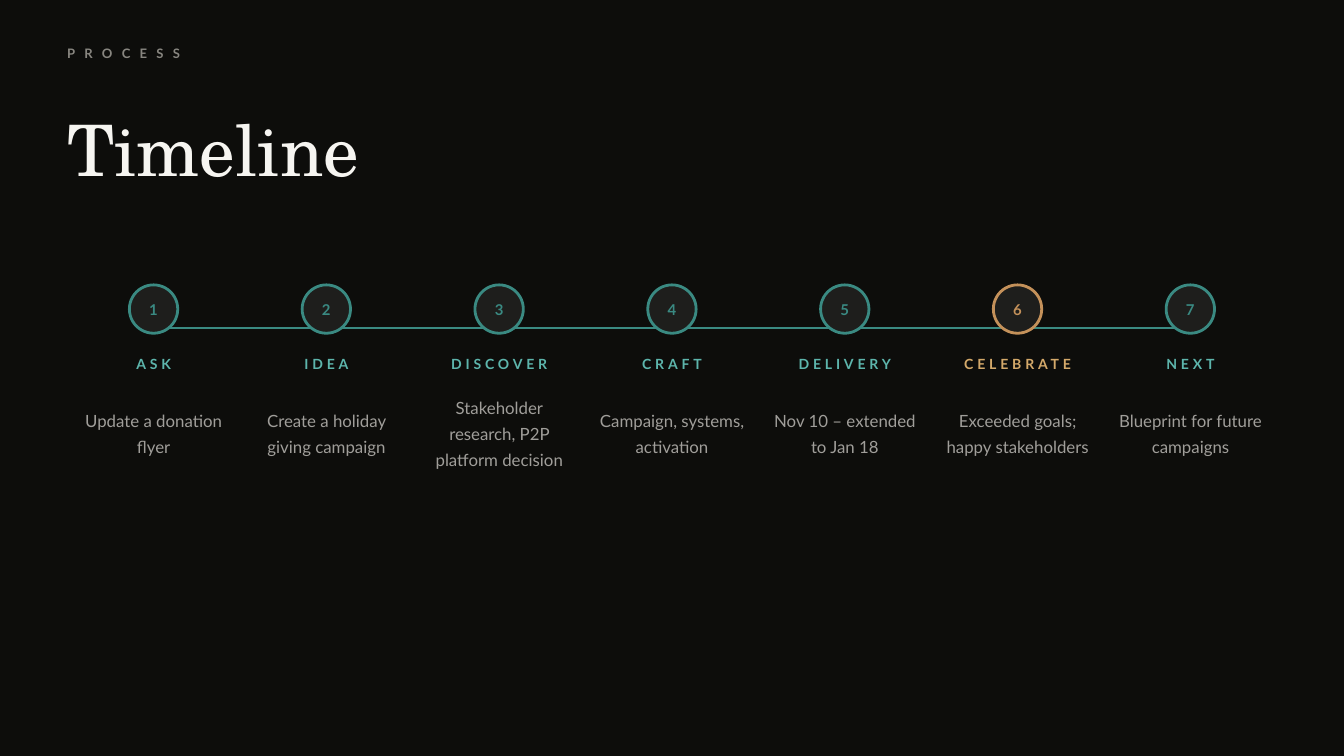
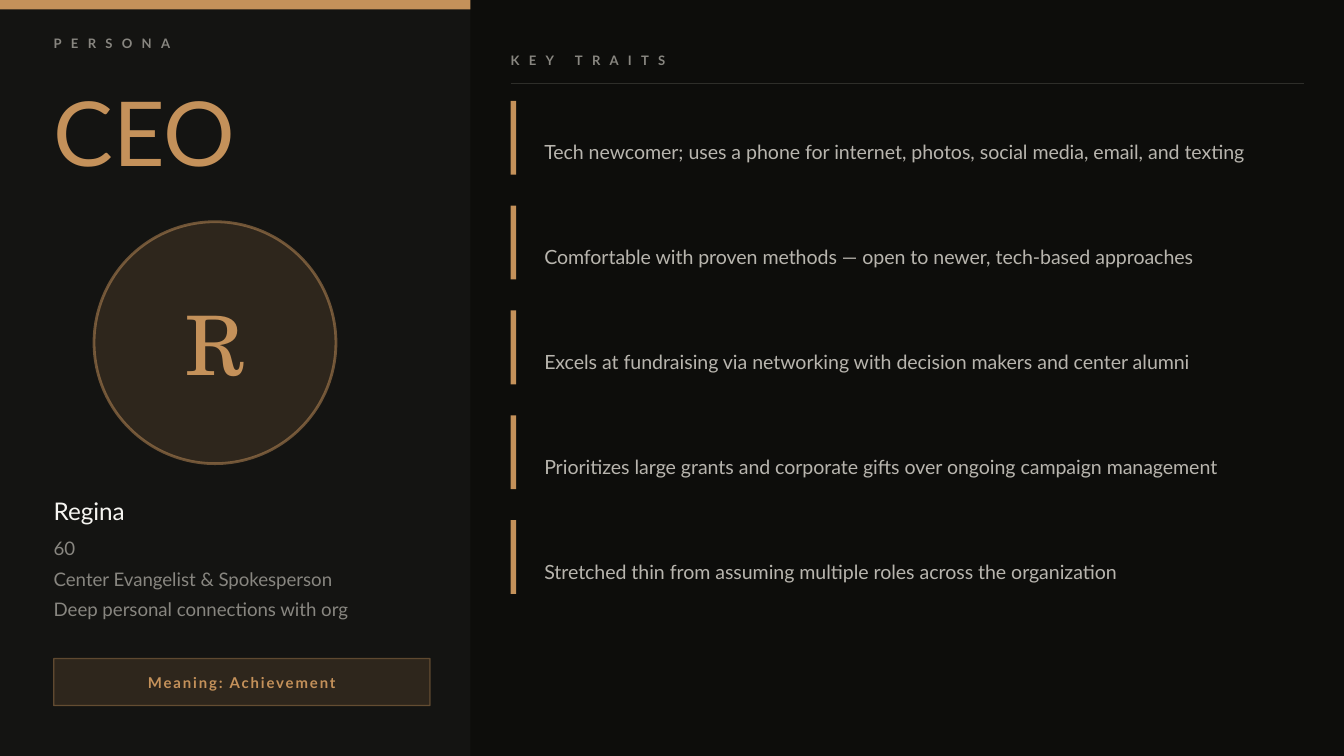
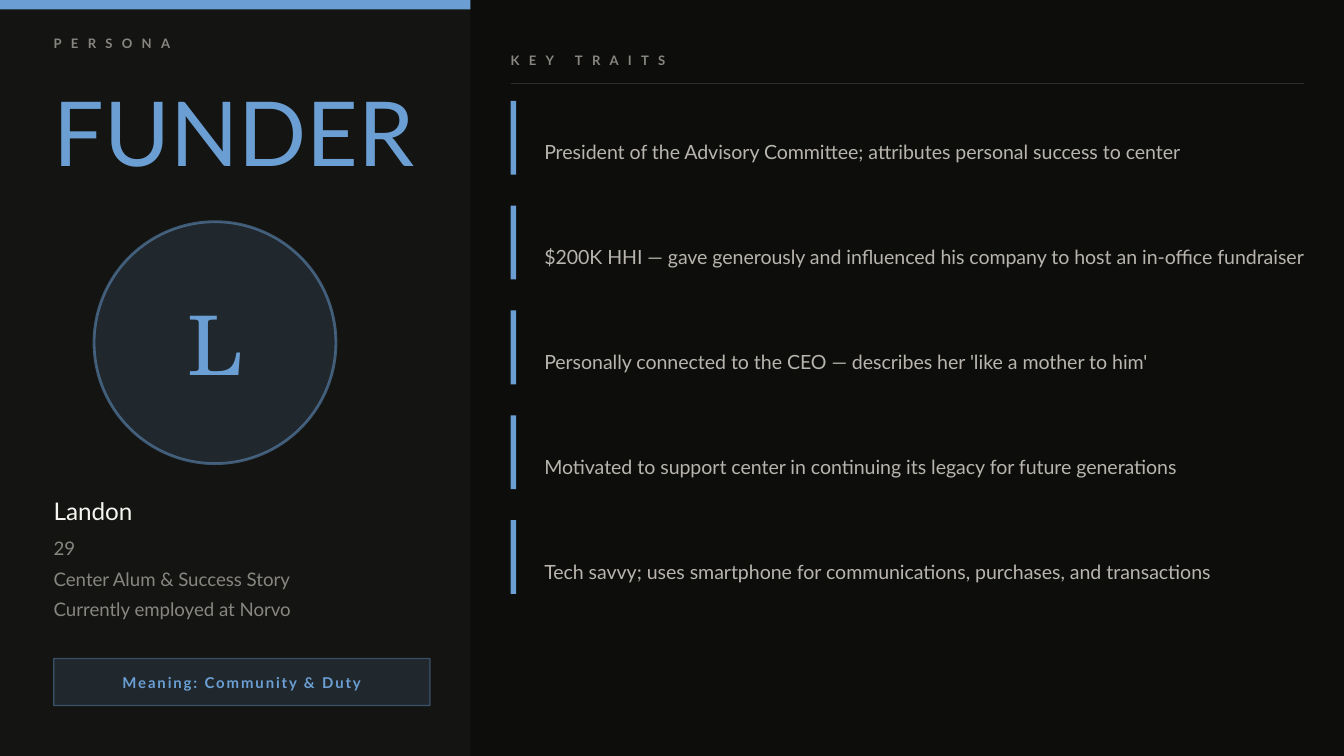
from lxml import etree
from pptx import Presentation
from pptx.dml.color import RGBColor
from pptx.enum.shapes import MSO_CONNECTOR, MSO_SHAPE
from pptx.enum.text import MSO_ANCHOR, MSO_AUTO_SIZE, PP_ALIGN
from pptx.oxml.ns import qn
from pptx.util import Inches, Pt

RECTANGLE = MSO_SHAPE.RECTANGLE
OVAL = MSO_SHAPE.OVAL
STRAIGHT = MSO_CONNECTOR.STRAIGHT
MIDDLE = MSO_ANCHOR.MIDDLE
FIXED_SIZE = MSO_AUTO_SIZE.NONE
LEFT = PP_ALIGN.LEFT
CENTER = PP_ALIGN.CENTER

COLUMNS, ROWS = 100, 56.25
CELL = 0.1
TITLE_ONLY = 5

SANS, SERIF = "Lato", "TeX Gyre Schola"
BACKGROUND, PANEL, NODE, RULE = "0D0D0B", "141412", "1E1E1C", "2E2E2A"
WHITE, GRAY, STEP_GRAY, TRAIT_GRAY = "F6F5F1", "888680", "A09E9A", "B8B5AE"
TEAL, LIGHT_TEAL = "3A8A82", "5DB5AC"
GOLD, LIGHT_GOLD, BLUE = "C4915A", "D4A96A", "6B9FD4"

MARGIN = 5
HIGHLIGHTED_STEP = "CELEBRATE"
STEPS = [
    ("ASK", "Update a donation flyer"),
    ("IDEA", "Create a holiday giving campaign"),
    ("DISCOVER", "Stakeholder research, P2P platform decision"),
    ("CRAFT", "Campaign, systems, activation"),
    ("DELIVERY", "Nov 10 – extended to Jan 18"),
    (HIGHLIGHTED_STEP, "Exceeded goals; happy stakeholders"),
    ("NEXT", "Blueprint for future campaigns"),
]

PANEL_WIDTH, PANEL_MARGIN = 35, 4
TRAITS_LEFT, TRAITS_TOP, TRAIT_PITCH = 38, 7.5, 7.8
PERSONAS = [
    {
        "role": "CEO",
        "name": "Regina",
        "accent": GOLD,
        "details": ["60", "Center Evangelist & Spokesperson", "Deep personal connections with org"],
        "meaning": "Achievement",
        "traits": [
            "Tech newcomer; uses a phone for internet, photos, social media, email, and texting",
            "Comfortable with proven methods — open to newer, tech-based approaches",
            "Excels at fundraising via networking with decision makers and center alumni",
            "Prioritizes large grants and corporate gifts over ongoing campaign management",
            "Stretched thin from assuming multiple roles across the organization",
        ],
    },
    {
        "role": "FUNDER",
        "name": "Landon",
        "accent": BLUE,
        "details": ["29", "Center Alum & Success Story", "Currently employed at Norvo"],
        "meaning": "Community & Duty",
        "traits": [
            "President of the Advisory Committee; attributes personal success to center",
            "$200K HHI — gave generously and influenced his company to host an in-office fundraiser",
            "Personally connected to the CEO — describes her 'like a mother to him'",
            "Motivated to support center in continuing its legacy for future generations",
            "Tech savvy; uses smartphone for communications, purchases, and transactions",
        ],
    },
]


def color(value):
    """Turn a hex string into a colour."""
    return RGBColor.from_string(value)


def cells(*counts):
    """Turn counts of grid cells into lengths."""
    return [Inches(count * CELL) for count in counts]


def write(shape, text, size, hex_color, font=SANS, bold=False, align=LEFT, tracking=0, spacing=None):
    """Fill a shape with one formatted, vertically centred paragraph."""
    frame = shape.text_frame
    frame.text = text
    frame.word_wrap = True
    frame.auto_size = FIXED_SIZE
    frame.vertical_anchor = MIDDLE
    frame.margin_left = frame.margin_right = frame.margin_top = frame.margin_bottom = 0
    paragraph = frame.paragraphs[0]
    paragraph.alignment = align
    if spacing:
        paragraph.line_spacing = spacing
    paragraph.font.name = font
    paragraph.font.size = Pt(size)
    paragraph.font.bold = bold
    paragraph.font.color.rgb = color(hex_color)
    if tracking:
        for properties in shape.element.iter(qn("a:defRPr")):
            properties.set("spc", str(tracking * 100))


def add_text(slide, box, text, size, hex_color, **style):
    """Add a text box on the grid."""
    write(slide.shapes.add_textbox(*cells(*box)), text, size, hex_color, **style)


def add_title(slide, box, text, size, hex_color, font):
    """Move the title placeholder to the front and format it."""
    title = slide.shapes.title
    title.element.getparent().append(title.element)
    title.left, title.top, title.width, title.height = cells(*box)
    write(title, text, size, hex_color, font=font)


def add_eyebrow(slide, box, text):
    """Add a small widely tracked heading."""
    add_text(slide, box, text, 7, GRAY, bold=True, tracking=5)


def set_opacity(shape, route, percent):
    """Make the colour found at a route below the shape properties translucent."""
    target = shape.element.spPr.find("/".join(qn(tag) for tag in route))
    etree.SubElement(target, qn("a:alpha")).set("val", str(percent * 1000))


def add_figure(slide, kind, box, fill, line=None, line_width=1.5):
    """Add a filled preset shape with an optional outline."""
    shape = slide.shapes.add_shape(kind, *cells(*box))
    shape.shadow.inherit = False
    shape.fill.solid()
    shape.fill.fore_color.rgb = color(fill)
    if line:
        shape.line.color.rgb = color(line)
        shape.line.width = Pt(line_width)
    else:
        shape.line.fill.background()
    return shape


def add_tinted_figure(slide, kind, box, accent, line_width, line_opacity):
    """Add a shape with a faint accent fill and a translucent outline."""
    shape = add_figure(slide, kind, box, accent, accent, line_width)
    set_opacity(shape, ["a:solidFill", "a:srgbClr"], 15)
    set_opacity(shape, ["a:ln", "a:solidFill", "a:srgbClr"], line_opacity)


def add_rule(slide, left, right, top, hex_color, width):
    """Add a horizontal line."""
    connector = slide.shapes.add_connector(STRAIGHT, *cells(left, top, right, top))
    connector.line.color.rgb = color(hex_color)
    connector.line.width = Pt(width)
    etree.SubElement(connector.element.spPr, qn("a:effectLst"))


def add_step(slide, number, center, column_width, label, description):
    """Add one numbered timeline step around its centre."""
    highlighted = label == HIGHLIGHTED_STEP
    accent, label_color = (GOLD, LIGHT_GOLD) if highlighted else (TEAL, LIGHT_TEAL)
    diameter, text_width = 3.6, column_width * 0.9
    node_left, text_left = center - diameter / 2, center - text_width / 2
    add_figure(slide, OVAL, (node_left, 21.2, diameter, diameter), NODE, accent)
    add_text(slide, (node_left, 21.5, diameter, 3), str(number), 8, accent, bold=True, align=CENTER)
    add_text(slide, (text_left, 25.8, text_width, 2.5), label, 7.5, label_color,
             bold=True, align=CENTER, tracking=2)
    add_text(slide, (text_left, 28.8, text_width, 6.5), description, 9, STEP_GRAY,
             align=CENTER, spacing=1.3)


def add_timeline_slide(presentation, layout):
    """Add the slide with the process steps."""
    slide = presentation.slides.add_slide(layout)
    add_eyebrow(slide, (MARGIN, 3, 90, 2), "PROCESS")
    add_title(slide, (MARGIN, 5, 50, 12), "Timeline", 38, WHITE, SERIF)
    column_width = (COLUMNS - 2 * MARGIN) / len(STEPS)
    centers = [MARGIN + (index + 0.5) * column_width for index in range(len(STEPS))]
    add_rule(slide, centers[0], centers[-1], 24.4, TEAL, 1)
    for number, (center, step) in enumerate(zip(centers, STEPS), start=1):
        add_step(slide, number, center, column_width, *step)


def add_profile(slide, persona):
    """Add the left panel that introduces a persona."""
    accent = persona["accent"]
    add_figure(slide, RECTANGLE, (0, 0, PANEL_WIDTH, ROWS), PANEL)
    add_figure(slide, RECTANGLE, (0, 0, PANEL_WIDTH, 0.7), accent)
    add_eyebrow(slide, (PANEL_MARGIN, 2.2, 25, 2), "PERSONA")
    add_title(slide, (PANEL_MARGIN, 4.5, 30, 10.5), persona["role"], 48, accent, SANS)
    add_tinted_figure(slide, OVAL, (7, 16.5, 18, 18), accent, 1.5, 50)
    add_text(slide, (7, 18, 18, 15), persona["name"][0], 44, accent, font=SERIF, align=CENTER)
    add_text(slide, (PANEL_MARGIN, 36.5, 29, 3), persona["name"], 13, WHITE)
    for index, detail in enumerate(persona["details"]):
        add_text(slide, (PANEL_MARGIN, 39.5 + index * 2.3, 29, 2.5), detail, 10, GRAY)
    badge = (PANEL_MARGIN, 49, 28, 3.5)
    add_tinted_figure(slide, RECTANGLE, badge, accent, 0.75, 40)
    add_text(slide, badge, "Meaning: " + persona["meaning"], 8, accent,
             bold=True, align=CENTER, tracking=1)


def add_traits(slide, traits, accent):
    """Add the evenly spaced traits, each marked by an accent bar."""
    add_eyebrow(slide, (TRAITS_LEFT, 3.5, 60, 2), "KEY TRAITS")
    add_rule(slide, TRAITS_LEFT, 97, 6.2, RULE, 0.75)
    for index, trait in enumerate(traits):
        top = TRAITS_TOP + index * TRAIT_PITCH
        add_figure(slide, RECTANGLE, (TRAITS_LEFT, top, 0.4, 5.5), accent)
        add_text(slide, (TRAITS_LEFT + 2.5, top + 0.4, 57, 6.2), trait, 10.5, TRAIT_GRAY, spacing=1.35)


def add_persona_slide(presentation, layout, persona):
    """Add the slide of one persona."""
    slide = presentation.slides.add_slide(layout)
    add_profile(slide, persona)
    add_traits(slide, persona["traits"], persona["accent"])


def main():
    """Build and save the presentation."""
    presentation = Presentation()
    presentation.slide_width, presentation.slide_height = cells(COLUMNS, ROWS)
    background = presentation.slide_master.background.fill
    background.solid()
    background.fore_color.rgb = color(BACKGROUND)
    layout = presentation.slide_layouts[TITLE_ONLY]
    add_timeline_slide(presentation, layout)
    for persona in PERSONAS:
        add_persona_slide(presentation, layout, persona)
    presentation.save("out.pptx")


if __name__ == "__main__":
    main()
